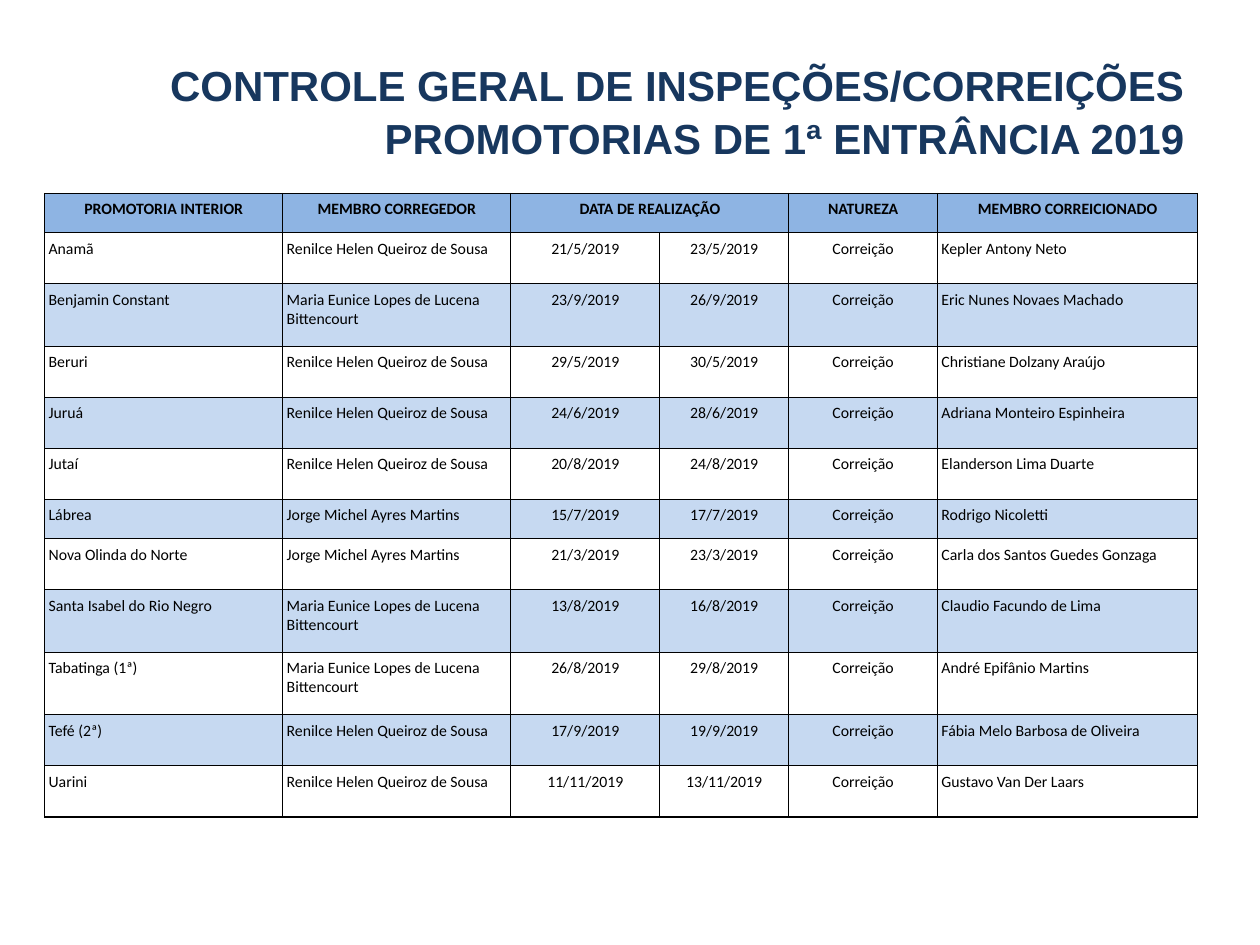
from copy import deepcopy
from typing import NamedTuple

from lxml.etree import SubElement
from pptx import Presentation
from pptx.dml.color import RGBColor
from pptx.enum.text import MSO_ANCHOR, MSO_AUTO_SIZE, PP_ALIGN
from pptx.oxml.ns import qn
from pptx.util import Cm, Pt

NAVY = RGBColor(0x17, 0x37, 0x5E)
HEADER_BLUE = RGBColor(0x8E, 0xB4, 0xE3)
BAND_BLUE = RGBColor(0xC6, 0xD9, 0xF1)
BLACK = RGBColor(0, 0, 0)

TITLE_FORMAT = {"name": "Arial", "size": Pt(24), "bold": True}
CELL_FORMAT = {"name": "Calibri", "size": Pt(9)}
CELL_MARGINS = {
    "margin_left": Cm(0.08), "margin_right": Cm(0.08),
    "margin_top": Cm(0.13), "margin_bottom": Cm(0.13),
}

# Row heights in centimetres
SHORT, MEDIUM, TALL = 0.79, 1.03, 1.26
COLUMN_WIDTHS = (4.8, 4.6, 3, 2.6, 3, 5.24)
CENTRED_COLUMNS = (2, 3, 4)

TITLE_LINES = ("CONTROLE GERAL DE INSPEÇÕES/CORREIÇÕES",
               "PROMOTORIAS DE 1ª ENTRÂNCIA 2019")
HEADINGS = ("PROMOTORIA INTERIOR", "MEMBRO CORREGEDOR", "DATA DE REALIZAÇÃO",
            "", "NATUREZA", "MEMBRO CORREICIONADO")
RENILCE = "Renilce Helen Queiroz de Sousa"
MARIA = "Maria Eunice Lopes de Lucena Bittencourt"
JORGE = "Jorge Michel Ayres Martins"


class Inspection(NamedTuple):
    place: str
    inspector: str
    start: str
    end: str
    member: str
    height: float = MEDIUM

    def texts(self) -> tuple:
        return (self.place, self.inspector, self.start, self.end,
                "Correição", self.member)


INSPECTIONS = (
    Inspection("Anamã", RENILCE, "21/5/2019", "23/5/2019", "Kepler Antony Neto"),
    Inspection("Benjamin Constant", MARIA, "23/9/2019", "26/9/2019",
               "Eric Nunes Novaes Machado", TALL),
    Inspection("Beruri", RENILCE, "29/5/2019", "30/5/2019", "Christiane Dolzany Araújo"),
    Inspection("Juruá", RENILCE, "24/6/2019", "28/6/2019", "Adriana Monteiro Espinheira"),
    Inspection("Jutaí", RENILCE, "20/8/2019", "24/8/2019", "Elanderson Lima Duarte"),
    Inspection("Lábrea", JORGE, "15/7/2019", "17/7/2019", "Rodrigo Nicoletti", SHORT),
    Inspection("Nova Olinda do Norte", JORGE, "21/3/2019", "23/3/2019",
               "Carla dos Santos Guedes Gonzaga"),
    Inspection("Santa Isabel do Rio Negro", MARIA, "13/8/2019", "16/8/2019",
               "Claudio Facundo de Lima", TALL),
    Inspection("Tabatinga (1ª)", MARIA, "26/8/2019", "29/8/2019",
               "André Epifânio Martins", TALL),
    Inspection("Tefé (2ª)", RENILCE, "17/9/2019", "19/9/2019",
               "Fábia Melo Barbosa de Oliveira"),
    Inspection("Uarini", RENILCE, "11/11/2019", "13/11/2019", "Gustavo Van Der Laars"),
)


def apply_format(target, values: dict) -> None:
    for name, value in values.items():
        setattr(target, name, value)


def add_span(para, text: str, values: dict, color: RGBColor):
    span = para.add_run()
    span.text = text
    apply_format(span.font, values)
    span.font.color.rgb = color
    return span


def add_borders(cell) -> None:
    properties = cell._tc.get_or_add_tcPr()
    for side in ("a:lnL", "a:lnR", "a:lnT", "a:lnB"):
        line = SubElement(properties, qn(side), w=str(Pt(0.75)))
        fill = SubElement(line, qn("a:solidFill"))
        SubElement(fill, qn("a:srgbClr"), val=str(BLACK))


def fill_row(table, row: int, texts: tuple, height: float,
             color: RGBColor | None, header: bool = False) -> None:
    table.rows[row].height = Cm(height)
    for column, text in enumerate(texts):
        cell = table.cell(row, column)
        apply_format(cell, CELL_MARGINS)
        cell.vertical_anchor = MSO_ANCHOR.TOP
        add_borders(cell)
        if color is None:
            cell.fill.background()
        else:
            cell.fill.solid()
            cell.fill.fore_color.rgb = color
        if text:
            para = cell.text_frame.paragraphs[0]
            centred = header or column in CENTRED_COLUMNS
            para.alignment = PP_ALIGN.CENTER if centred else PP_ALIGN.LEFT
            add_span(para, text, CELL_FORMAT | {"bold": header}, BLACK)


def add_title(page) -> None:
    box = page.shapes.title
    apply_format(box, {"left": Cm(1.27), "top": Cm(0.91),
                       "width": Cm(22.86), "height": Cm(2.6)})
    apply_format(box.text_frame, {"word_wrap": True, "auto_size": MSO_AUTO_SIZE.NONE,
                                  "vertical_anchor": MSO_ANCHOR.MIDDLE})
    para = box.text_frame.paragraphs[0]
    apply_format(para, {"alignment": PP_ALIGN.RIGHT, "line_spacing": 1.06})
    first = add_span(para, TITLE_LINES[0], TITLE_FORMAT, NAVY)
    para.add_line_break()
    # The break takes the format of the text, so the line keeps its height
    para._p.find(qn("a:br")).append(deepcopy(first._r.find(qn("a:rPr"))))
    add_span(para, TITLE_LINES[1], TITLE_FORMAT, NAVY)


def add_inspection_table(page) -> None:
    height = SHORT + sum(item.height for item in INSPECTIONS)
    table = page.shapes.add_table(
        len(INSPECTIONS) + 1, len(COLUMN_WIDTHS), Cm(0.9), Cm(3.9),
        Cm(sum(COLUMN_WIDTHS)), Cm(height)).table
    apply_format(table, {"first_row": False, "horz_banding": False})
    for column, width in zip(table.columns, COLUMN_WIDTHS):
        column.width = Cm(width)
    # Header, with one heading over both dates
    fill_row(table, 0, HEADINGS, SHORT, HEADER_BLUE, header=True)
    table.cell(0, 2).merge(table.cell(0, 3))
    # Every second inspection is shaded
    for row, item in enumerate(INSPECTIONS, start=1):
        fill_row(table, row, item.texts(), item.height,
                 BAND_BLUE if row % 2 == 0 else None)


def main() -> None:
    deck = Presentation()
    deck.slide_width, deck.slide_height = Cm(25.4), Cm(19.05)
    page = deck.slides.add_slide(deck.slide_layouts[5])
    add_title(page)
    add_inspection_table(page)
    deck.save("out.pptx")


if __name__ == "__main__":
    main()
